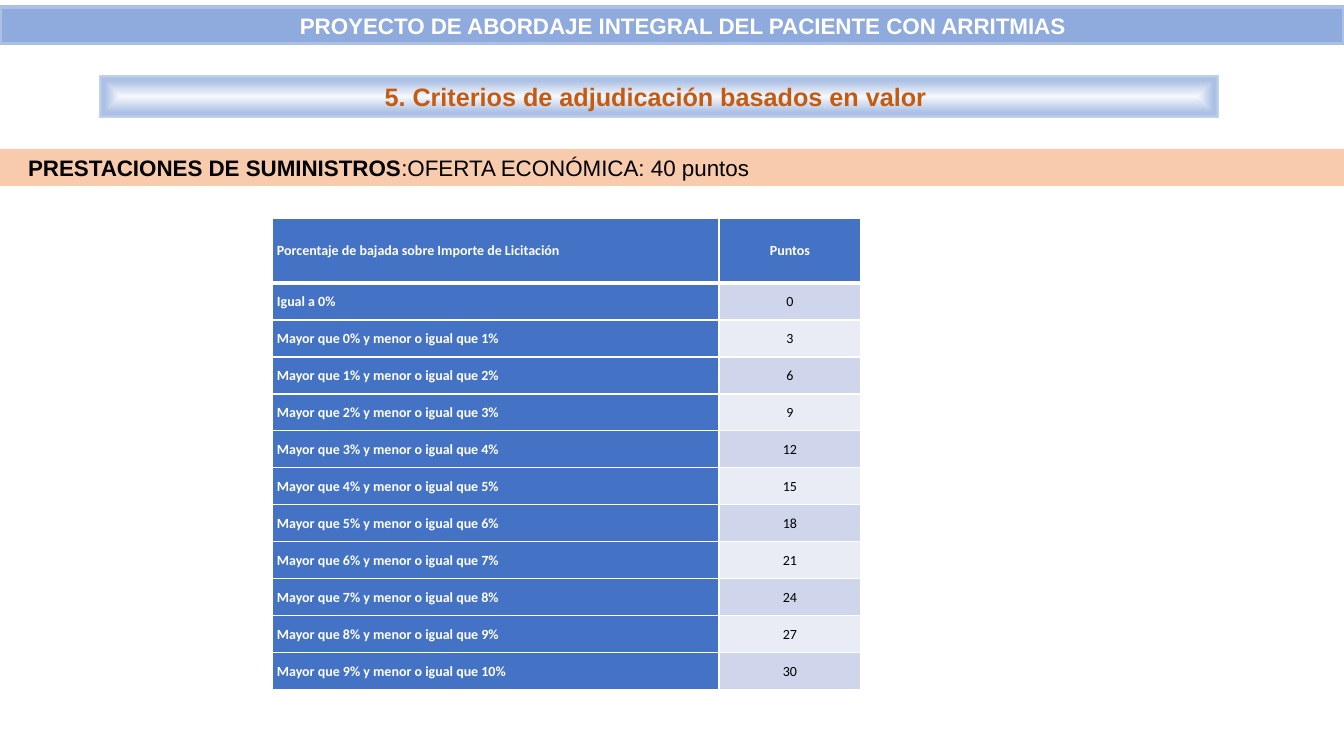
from pptx import Presentation
from pptx.dml.color import RGBColor
from pptx.enum.shapes import MSO_SHAPE
from pptx.enum.text import MSO_ANCHOR, MSO_AUTO_SIZE, PP_ALIGN
from pptx.oxml import parse_xml
from pptx.oxml.ns import nsdecls, qn
from pptx.util import Emu, Pt

# Content
TITLE = "PROYECTO DE ABORDAJE INTEGRAL DEL PACIENTE CON ARRITMIAS"
TOPIC = "5. Criterios de adjudicación basados en valor "
SECTION = ("PRESTACIONES DE SUMINISTROS", ":OFERTA ECONÓMICA: 40 puntos")
HEAD = ("Porcentaje de bajada sobre Importe de Licitación", "Puntos")
SCORES = [("Igual a 0%", "0")] + [
    (f"Mayor que {n}% y menor o igual que {n + 1}%", str(3 * (n + 1)))
    for n in range(10)
]

COLORS = {
    "white": "FFFFFF", "black": "000000", "blue": "4472C4",
    "odd": "CFD5EA", "even": "E9EBF5", "bar": "8FAADC",
    "edge": "ABC0E4", "peach": "F8CBAD", "rust": "C55A11",
    "pale": "F6F8FC", "rim": "C7D5ED",
}
STOPS = [(0, "pale"), (74, "edge"), (83, "edge"), (100, "rim")]

# Layout in px
SIZE = (1344, 756)
TITLE_BOX = (0, 7, 1344, 37)
TOPIC_BOX = (99, 75, 1120, 43)
SECTION_BOX = (0, 149, 1344, 37)
GRID_AT = (272, 218)
COLS = (447, 142)
HEAD_H, ROW_H = 65, 37
SCALE = 914400 / 100.8


def px(n):
    return Emu(round(n * SCALE))


def rgb(name):
    return RGBColor.from_string(COLORS[name])


def style(par, font, size, color, bold=None, align=None):
    par.font.name, par.font.size = font, Pt(size)
    par.font.color.rgb, par.font.bold = rgb(color), bold
    par.alignment = align


def frame(shape, left=10):
    text = shape.text_frame
    text.word_wrap, text.auto_size = True, MSO_AUTO_SIZE.NONE
    text.vertical_anchor = MSO_ANCHOR.MIDDLE
    text.margin_left, text.margin_right = px(left), px(10)
    text.margin_top = text.margin_bottom = px(5)
    return text


def paint(shape, color):
    shape.fill.solid()
    shape.fill.fore_color.rgb = rgb(color)


def add_bar(box):
    bar = slide.shapes.add_shape(MSO_SHAPE.RECTANGLE, *map(px, box))
    bar.shadow.inherit = False
    bar.line.fill.background()
    return bar


def glow(shape):
    stops = "".join(
        f'<a:gs pos="{pos * 1000}"><a:srgbClr val="{COLORS[name]}"/></a:gs>'
        for pos, name in STOPS)
    grad = parse_xml(
        f'<a:gradFill {nsdecls("a")} rotWithShape="1"><a:gsLst>{stops}</a:gsLst>'
        '<a:path path="shape"><a:fillToRect l="50000" t="50000" r="50000" '
        'b="50000"/></a:path></a:gradFill>')
    shape.fill.solid()
    props = shape.element.spPr
    props.replace(props.find(qn("a:solidFill")), grad)


def edge(cell, row):
    widths = {"L": 1, "R": 1, "T": 3 if row == 1 else 1, "B": 3 if row == 0 else 1}
    props = cell._tc.get_or_add_tcPr()
    for i, (side, width) in enumerate(widths.items()):
        props.insert(i, parse_xml(
            f'<a:ln{side} {nsdecls("a")} w="{Pt(width)}"><a:solidFill>'
            f'<a:srgbClr val="{COLORS["white"]}"/></a:solidFill></a:ln{side}>'))


deck = Presentation()
deck.slide_width, deck.slide_height = map(px, SIZE)
slide = deck.slides.add_slide(deck.slide_layouts[5])

# Title bar
title = slide.shapes.title
title.left, title.top, title.width, title.height = map(px, TITLE_BOX)
paint(title, "bar")
title.line.color.rgb, title.line.width = rgb("edge"), Pt(2.25)
text = frame(title, 32)
text.text = TITLE
style(text.paragraphs[0], "Arial", 16, "white", True, PP_ALIGN.CENTER)

# Topic bar
topic = add_bar(TOPIC_BOX)
glow(topic)
text = frame(topic)
text.text = TOPIC
style(text.paragraphs[0], "Arial", 18, "rust", True, PP_ALIGN.CENTER)

# Section bar
section = add_bar(SECTION_BOX)
paint(section, "peach")
par = frame(section, 28).paragraphs[0]
style(par, "Arial", 16, "black", align=PP_ALIGN.LEFT)
for part, bold in zip(SECTION, (True, False)):
    run = par.add_run()
    run.text, run.font.bold = part, bold

# Score table
rows = [HEAD] + SCORES
high = HEAD_H + ROW_H * len(SCORES)
grid = slide.shapes.add_table(
    len(rows), len(COLS), *map(px, (*GRID_AT, sum(COLS), high))).table
for col, width in zip(grid.columns, COLS):
    col.width = px(width)
for r, row in enumerate(rows):
    grid.rows[r].height = px(ROW_H if r else HEAD_H)
    for c, words in enumerate(row):
        cell = grid.cell(r, c)
        score = r > 0 and c == 1
        cell.text = words
        cell.vertical_anchor = MSO_ANCHOR.MIDDLE
        cell.margin_left = cell.margin_right = px(5)
        cell.margin_top = cell.margin_bottom = 0
        paint(cell, ("odd" if r % 2 else "even") if score else "blue")
        edge(cell, r)
        style(cell.text_frame.paragraphs[0], "Calibri", 10,
              "black" if score else "white", not score,
              PP_ALIGN.CENTER if c else PP_ALIGN.JUSTIFY)

deck.save("out.pptx")
